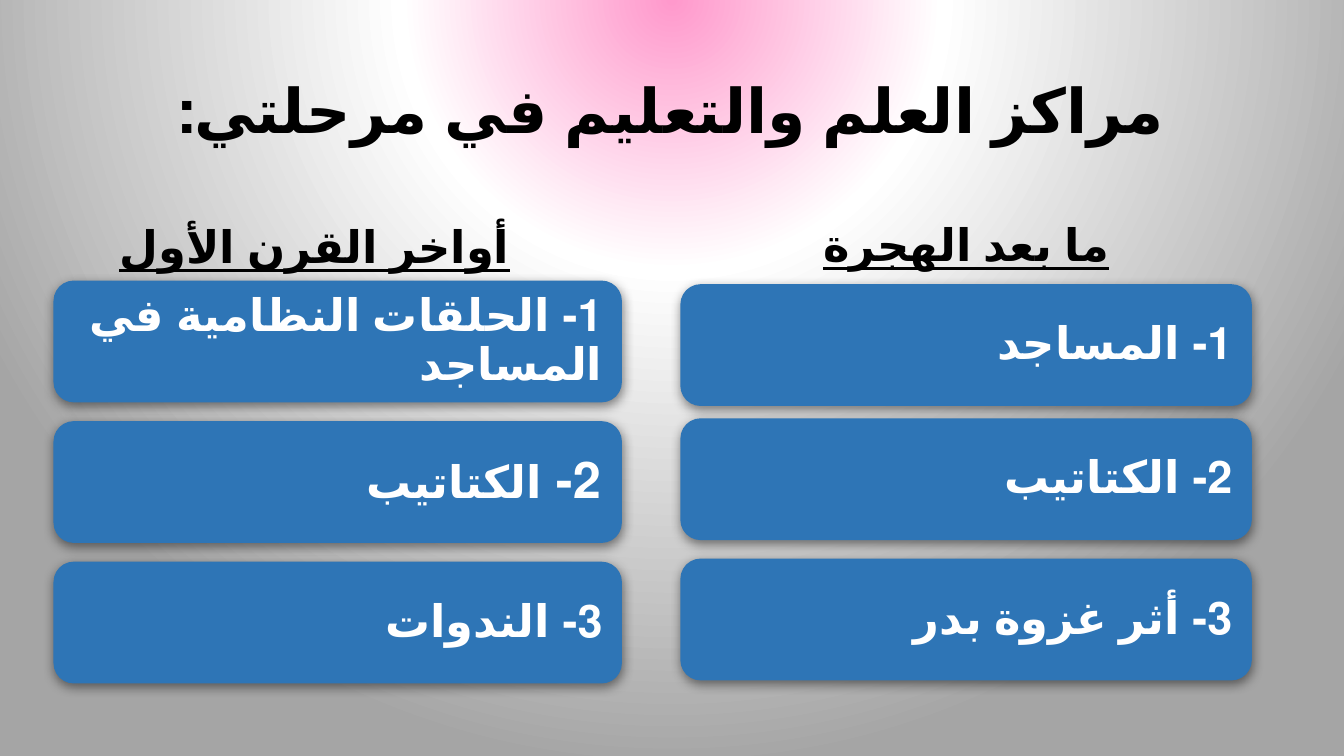
from dataclasses import dataclass

from pptx import Presentation
from pptx.dml.color import RGBColor
from pptx.enum.lang import MSO_LANGUAGE_ID
from pptx.enum.shapes import MSO_SHAPE
from pptx.enum.text import MSO_ANCHOR, MSO_AUTO_SIZE, PP_ALIGN
from pptx.oxml import parse_xml
from pptx.oxml.ns import nsdecls, qn
from pptx.util import Pt

ARABIC = MSO_LANGUAGE_ID.ARABIC
ROUNDED = MSO_SHAPE.ROUNDED_RECTANGLE
MIDDLE, BOTTOM = MSO_ANCHOR.MIDDLE, MSO_ANCHOR.BOTTOM
CENTER, RIGHT = PP_ALIGN.CENTER, PP_ALIGN.RIGHT
NO_FIT = MSO_AUTO_SIZE.NONE


@dataclass(frozen=True)
class Theme:
    font: str = "Calibri"
    ink: str = "000000"
    card: str = "2E75B6"
    card_text: str = "FFFFFF"
    backdrop: tuple = ((0, "FF99CC"), (35, "FFFFFF"), (100, "A5A5A5"))
    title: int = 44
    text: int = 32
    large: int = 36


THEME = Theme()


def paint_background(s):
    s.background.fill.gradient()
    stops = "".join(
        f'<a:gs pos="{pos * 1000}"><a:srgbClr val="{color}"/></a:gs>'
        for pos, color in THEME.backdrop)
    grad = parse_xml(
        f'<a:gradFill {nsdecls("a")} rotWithShape="1"><a:gsLst>{stops}</a:gsLst>'
        '<a:path path="circle"><a:fillToRect l="50000" t="-80000" '
        'r="50000" b="180000"/></a:path></a:gradFill>')
    old = next(s.element.iter(qn("a:gradFill")))
    old.getparent().replace(old, grad)


def write_text(tf, runs, color, align, anchor, underline=None):
    tf.word_wrap = True
    tf.auto_size = NO_FIT
    tf.vertical_anchor = anchor
    p = tf.paragraphs[0]
    p.alignment = align
    p.line_spacing = 0.9
    p._p.get_or_add_pPr().set("rtl", "1")
    for text, size in runs:
        r = p.add_run()
        r.text = text
        r.font.language_id = ARABIC
        r.font.name = THEME.font
        r.font.size = Pt(size)
        r.font.bold = True
        r.font.underline = underline
        r.font.color.rgb = RGBColor.from_string(color)
    return p


def place(sp, box):
    sp.left, sp.top, sp.width, sp.height = (Pt(v) for v in box)


def add_title(sp, box, text):
    place(sp, box)
    write_text(sp.text_frame, [(text, THEME.title)], THEME.ink, CENTER, MIDDLE)


def add_heading(sp, box, text):
    place(sp, box)
    p = write_text(sp.text_frame, [(text, THEME.text)], THEME.ink, CENTER, BOTTOM, True)
    p.space_before = Pt(10)


def add_shadow(sp):
    sp.shadow.inherit = False
    sp._element.spPr.find(qn("a:effectLst")).append(parse_xml(
        f'<a:outerShdw {nsdecls("a")} blurRad="{Pt(8)}" dist="{Pt(2.2)}" '
        'dir="5400000" algn="ctr" rotWithShape="0"><a:srgbClr val="000000">'
        '<a:alpha val="45000"/></a:srgbClr></a:outerShdw>'))


def add_card(group, box, runs, inset):
    sp = group.shapes.add_shape(ROUNDED, *(Pt(v) for v in box))
    sp.fill.solid()
    sp.fill.fore_color.rgb = RGBColor.from_string(THEME.card)
    sp.line.fill.background()
    add_shadow(sp)
    tf = sp.text_frame
    tf.margin_left = tf.margin_right = tf.margin_top = tf.margin_bottom = Pt(inset)
    write_text(tf, runs, THEME.card_text, RIGHT, MIDDLE)


def add_column(s, heading, heading_box, title, left, width, cards):
    add_heading(heading, heading_box, title)
    group = s.shapes.add_group_shape()
    for top, runs in cards:
        inset = 10.8 if runs[0][1] == THEME.large else 9.6
        add_card(group, (left, top, width, 87), runs, inset)


def build_comparison(prs):
    s = prs.slides.add_slide(prs.slide_layouts[4])
    paint_background(s)
    holders = {sp.placeholder_format.idx: sp for sp in s.placeholders}
    for idx, sp in holders.items():
        if idx not in (0, 1, 3):
            sp._element.getparent().remove(sp._element)

    size = THEME.text
    add_title(holders[0], (66, 28.8, 828, 104.4), "مراكز العلم والتعليم في مرحلتي:")
    add_column(s, holders[1], (38.2, 133.9, 373, 64.8), "أواخر القرن الأول", 38.2, 406, [
        (200.4, [("1- الحلقات النظامية في المساجد", size)]),
        (300.8, [("2- ", THEME.large), ("الكتاتيب", size)]),
        (401.2, [("3- الندوات", size)]),
    ])
    add_column(s, holders[3], (486, 132.5, 408.2, 64.8), "ما بعد الهجرة", 486, 408.2, [
        (203, [("1- المساجد", size)]),
        (298.8, [("2- الكتاتيب", size)]),
        (399, [("3- أثر غزوة بدر", size)]),
    ])


def main():
    prs = Presentation()
    prs.slide_width, prs.slide_height = Pt(960), Pt(540)
    build_comparison(prs)
    prs.save("out.pptx")


if __name__ == "__main__":
    main()
